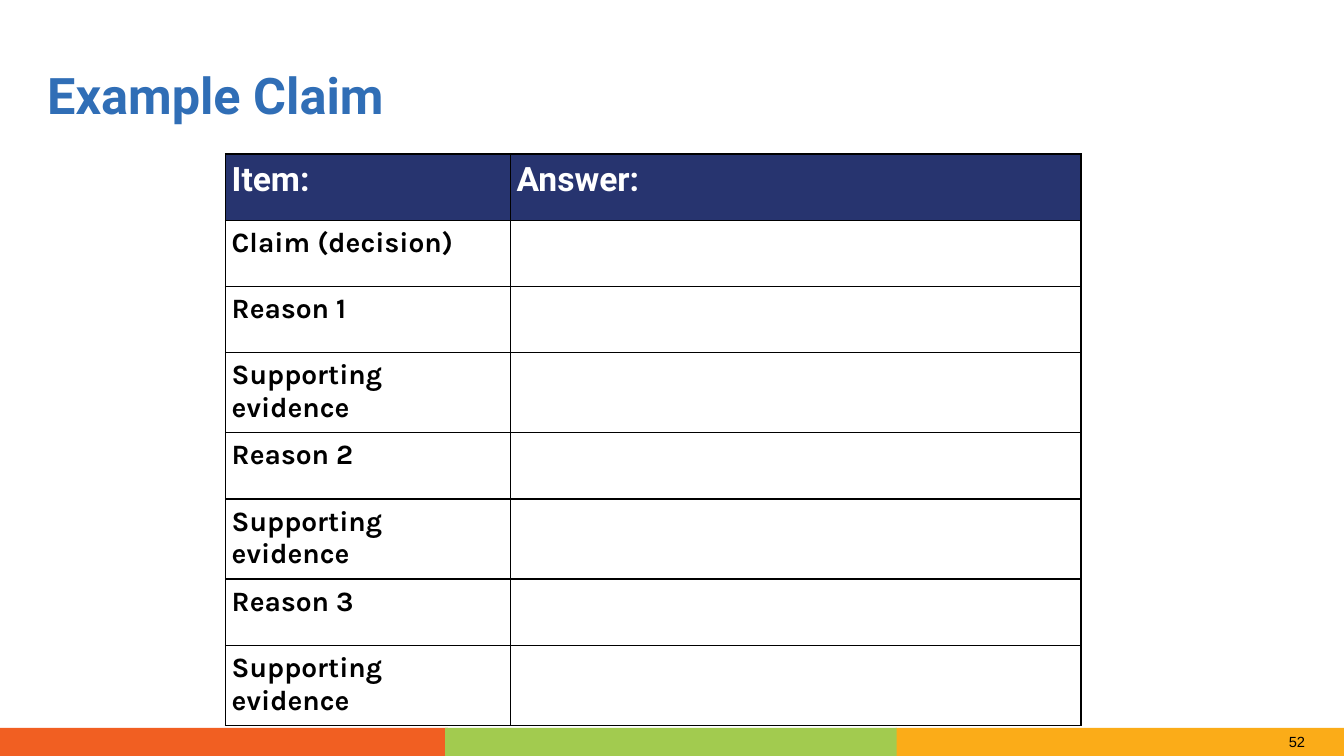
import pptx
import pptx.util
import pptx.dml.color
import pptx.enum.shapes
import pptx.enum.text
import pptx.oxml
import pptx.oxml.ns

Cm = pptx.util.Cm
Pt = pptx.util.Pt
RGB = pptx.dml.color.RGBColor.from_string
ANCHOR = pptx.enum.text.MSO_ANCHOR

theme = {
    "title": {"font": "Roboto", "size": 36, "color": "306EB6", "bold": True},
    "head": {"font": "Roboto", "size": 24, "color": "FFFFFF", "bold": True},
    "body": {"font": "Karla", "size": 20, "color": "000000", "bold": True},
    "page": {"font": "Arial", "size": 10.5, "color": "000000"},
    "navy": "27346F",
    "line": "000000",
    "orange": "F15F22",
    "green": "A2CB4F",
    "yellow": "FBAC18",
}


def write(frame, text, font, size, color, bold=False, space=None):
    par = frame.paragraphs[0]
    par.line_spacing = space
    run = par.add_run()
    run.text = text
    run.font.name = font
    run.font.size = Pt(size)
    run.font.bold = bold
    run.font.color.rgb = RGB(color)


def edge(cell):
    props = cell._tc.get_or_add_tcPr()
    for index, side in enumerate(("lnL", "lnR", "lnT", "lnB")):
        line = pptx.oxml.parse_xml(
            f'<a:{side} {pptx.oxml.ns.nsdecls("a")} w="12700"><a:solidFill>'
            f'<a:srgbClr val="{theme["line"]}"/></a:solidFill></a:{side}>')
        props.insert(index, line)


deck = pptx.Presentation()
deck.slide_width = Cm(33.87)
deck.slide_height = Cm(19.05)
slide = deck.slides.add_slide(deck.slide_layouts[6])
shapes = slide.shapes

# Footer bands
for left, width, color in ((22.58, 11.29, "yellow"), (0, 11.29, "orange"),
                           (11.22, 11.38, "green")):
    band = shapes.add_shape(pptx.enum.shapes.MSO_SHAPE.RECTANGLE,
                            Cm(left), Cm(18.34), Cm(width), Cm(0.71))
    band.shadow.inherit = False
    band.fill.solid()
    band.fill.fore_color.rgb = RGB(theme[color])
    band.line.fill.background()

# Page number
page = shapes.add_textbox(Cm(32.23), Cm(18.34), Cm(0.97), Cm(0.71)).text_frame
page.word_wrap = False
page.vertical_anchor = ANCHOR.MIDDLE
write(page, "52", **theme["page"])

# Title
title = shapes.add_textbox(Cm(1.19), Cm(1.07), Cm(31.5), Cm(2.82)).text_frame
title.word_wrap = True
title.vertical_anchor = ANCHOR.MIDDLE
title.margin_left = title.margin_right = 0
title.margin_top = title.margin_bottom = 0
write(title, "Example Claim", space=0.9, **theme["title"])

# Claim table
rows = [("Item:", "Answer:"), ("Claim (decision)", "")]
for count in range(1, 4):
    rows += [(f"Reason {count}", ""), ("Supporting evidence", "")]

high = Cm(1.67)
table = shapes.add_table(len(rows), 2, Cm(5.68), Cm(3.88),
                         Cm(21.56), high * len(rows)).table
table.horz_banding = False
for column, width in zip(table.columns, (7.18, 14.38)):
    column.width = Cm(width)

for r, row in enumerate(rows):
    table.rows[r].height = high
    for c, text in enumerate(row):
        cell = table.cell(r, c)
        cell.margin_left = cell.margin_right = Cm(0.16)
        cell.margin_top = cell.margin_bottom = Cm(0.16)
        if r == 0:
            cell.fill.solid()
            cell.fill.fore_color.rgb = RGB(theme["navy"])
        else:
            cell.fill.background()
        edge(cell)
        if text:
            write(cell.text_frame, text, **theme["body" if r else "head"])

deck.save("out.pptx")
